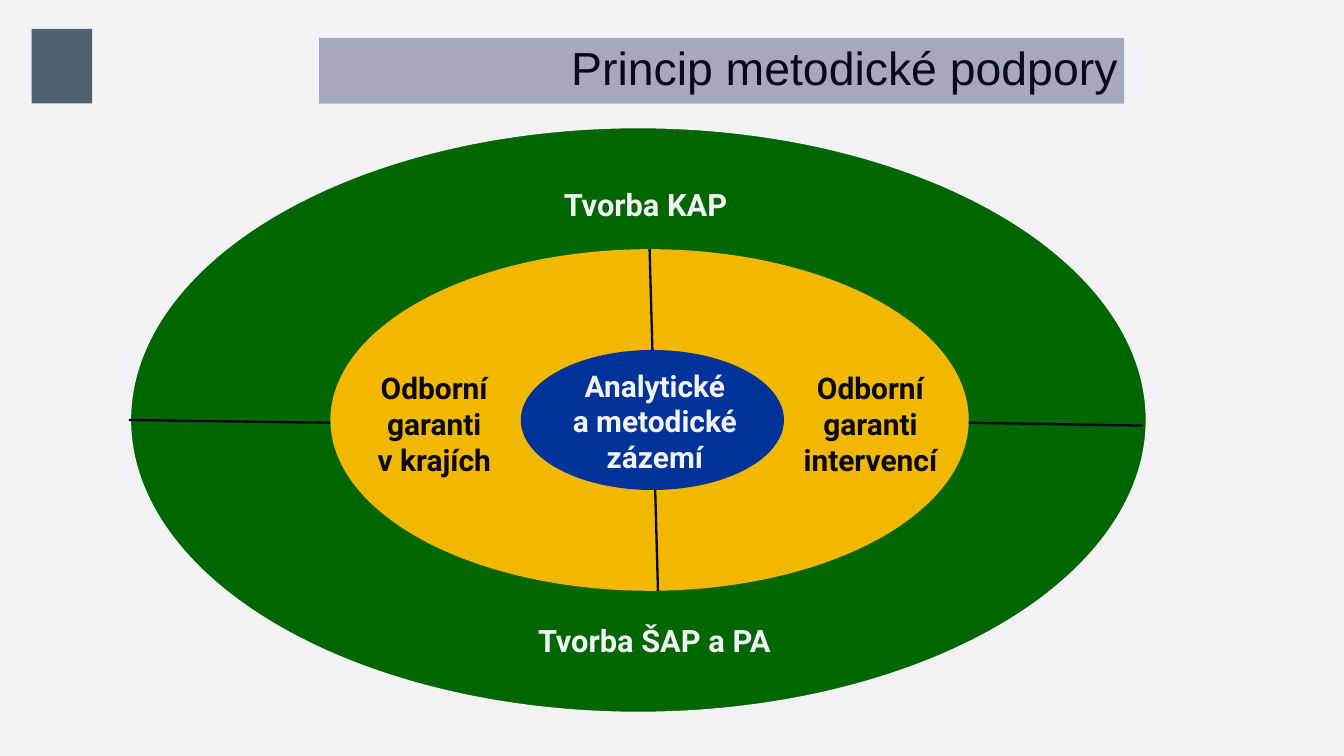
from typing import NamedTuple, Optional

from lxml import etree
from pptx import Presentation
from pptx import util as u
from pptx.dml.color import RGBColor
from pptx.enum import shapes, text
from pptx.oxml.ns import qn

PALE = RGBColor(0xF2, 0xF2, 0xF5)
INK = RGBColor(0x0A, 0x09, 0x1B)
LILAC = RGBColor(0xA8, 0xA8, 0xBC)
SLATE = RGBColor(0x4F, 0x60, 0x6E)
GREEN = RGBColor(0x00, 0x66, 0x00)
AMBER = RGBColor(0xF2, 0xB8, 0x00)
BLUE = RGBColor(0x00, 0x33, 0x99)

COLUMNS, ROWS = 240, 135
SLIDE_WIDTH, SLIDE_HEIGHT = u.Inches(20), u.Inches(11.25)


class Area(NamedTuple):
    column: float
    row: float
    columns: float
    rows: float


class Ring(NamedTuple):
    area: Area
    fill: RGBColor
    outline: Optional[RGBColor] = None


class Label(NamedTuple):
    area: Area
    wording: str
    color: RGBColor
    size: float = 32


class Divider(NamedTuple):
    start: tuple[float, float]
    end: tuple[float, float]


RINGS = [
    Ring(Area(23, 22.5, 182, 105), GREEN, PALE),
    Ring(Area(59, 44.5, 114, 61), AMBER),
    Ring(Area(93, 62.5, 47, 25), BLUE),
]
LABELS = [
    Label(Area(79, 110.5, 75.7, 8), "Tvorba ŠAP a PA", PALE, 33),
    Label(Area(84, 32.5, 62.6, 8), "Tvorba KAP", PALE, 33),
    Label(Area(66.1, 65.5, 22.9, 20.6), "Odborní\ngaranti\nv krajích", INK),
    Label(Area(142.3, 65.5, 26.3, 20.6), "Odborní\ngaranti\nintervencí", INK),
    Label(Area(100.2, 65, 33.5, 20.6), "Analytické\na metodické\nzázemí", PALE),
]
DIVIDERS = [
    Divider((173, 75.5), (204, 76)),
    Divider((23, 75), (59, 75.5)),
    Divider((116.5, 62.5), (116, 44.5)),
    Divider((117.5, 105.5), (117, 87.5)),
]


def across(columns: float) -> int:
    return round(SLIDE_WIDTH * columns / COLUMNS)


def down(rows: float) -> int:
    return round(SLIDE_HEIGHT * rows / ROWS)


def place(area: Area) -> tuple[int, int, int, int]:
    return across(area.column), down(area.row), across(area.columns), down(area.rows)


def write(frame, wording: str, *, font: str, size: float, color: RGBColor,
          bold: bool = False, align=text.PP_ALIGN.CENTER,
          anchor=text.MSO_ANCHOR.TOP, spacing: float = 1, wrap: bool = False) -> None:
    frame.word_wrap = wrap
    frame.vertical_anchor = anchor
    frame.text = wording
    for paragraph in frame.paragraphs:
        paragraph.alignment = align
        paragraph.line_spacing = spacing
        paragraph.font.name = font
        paragraph.font.size = u.Pt(size)
        paragraph.font.bold = bold
        paragraph.font.color.rgb = color


def draw_shape(slide, kind, area: Area, fill: RGBColor,
               outline: Optional[RGBColor] = None):
    shape = slide.shapes.add_shape(kind, *place(area))
    shape.shadow.inherit = False
    shape.fill.solid()
    shape.fill.fore_color.rgb = fill
    if outline is None:
        shape.line.fill.background()
    else:
        shape.line.color.rgb = outline
        shape.line.width = u.Pt(5)
    return shape


def draw_label(slide, label: Label) -> None:
    box = slide.shapes.add_textbox(*place(label.area))
    write(box.text_frame, label.wording, font="Roboto", size=label.size,
          color=label.color, bold=True)


def draw_divider(slide, divider: Divider) -> None:
    (left, top), (right, bottom) = divider
    line = slide.shapes.add_connector(
        shapes.MSO_CONNECTOR.STRAIGHT,
        across(left), down(top), across(right), down(bottom))
    line.line.color.rgb = INK
    line.line.width = u.Pt(2.5)
    etree.SubElement(line.element.spPr, qn("a:effectLst"))


def main() -> None:
    deck = Presentation()
    deck.slide_width, deck.slide_height = SLIDE_WIDTH, SLIDE_HEIGHT
    slide = deck.slides.add_slide(deck.slide_layouts[6])
    slide.background.fill.solid()
    slide.background.fill.fore_color.rgb = PALE

    rectangle = shapes.MSO_SHAPE.RECTANGLE
    draw_shape(slide, rectangle, Area(5.65, 5.15, 10.8, 13.3), SLATE)
    heading = draw_shape(slide, rectangle, Area(57, 6.75, 143.75, 11.75), LILAC)
    write(heading.text_frame, "Princip metodické podpory", font="Arial", size=49.7,
          color=INK, align=text.PP_ALIGN.RIGHT, anchor=text.MSO_ANCHOR.MIDDLE,
          spacing=0.9, wrap=True)

    for ring in RINGS:
        draw_shape(slide, shapes.MSO_SHAPE.OVAL, *ring)
    for label in LABELS:
        draw_label(slide, label)
    for divider in DIVIDERS:
        draw_divider(slide, divider)

    deck.save("out.pptx")


if __name__ == "__main__":
    main()
